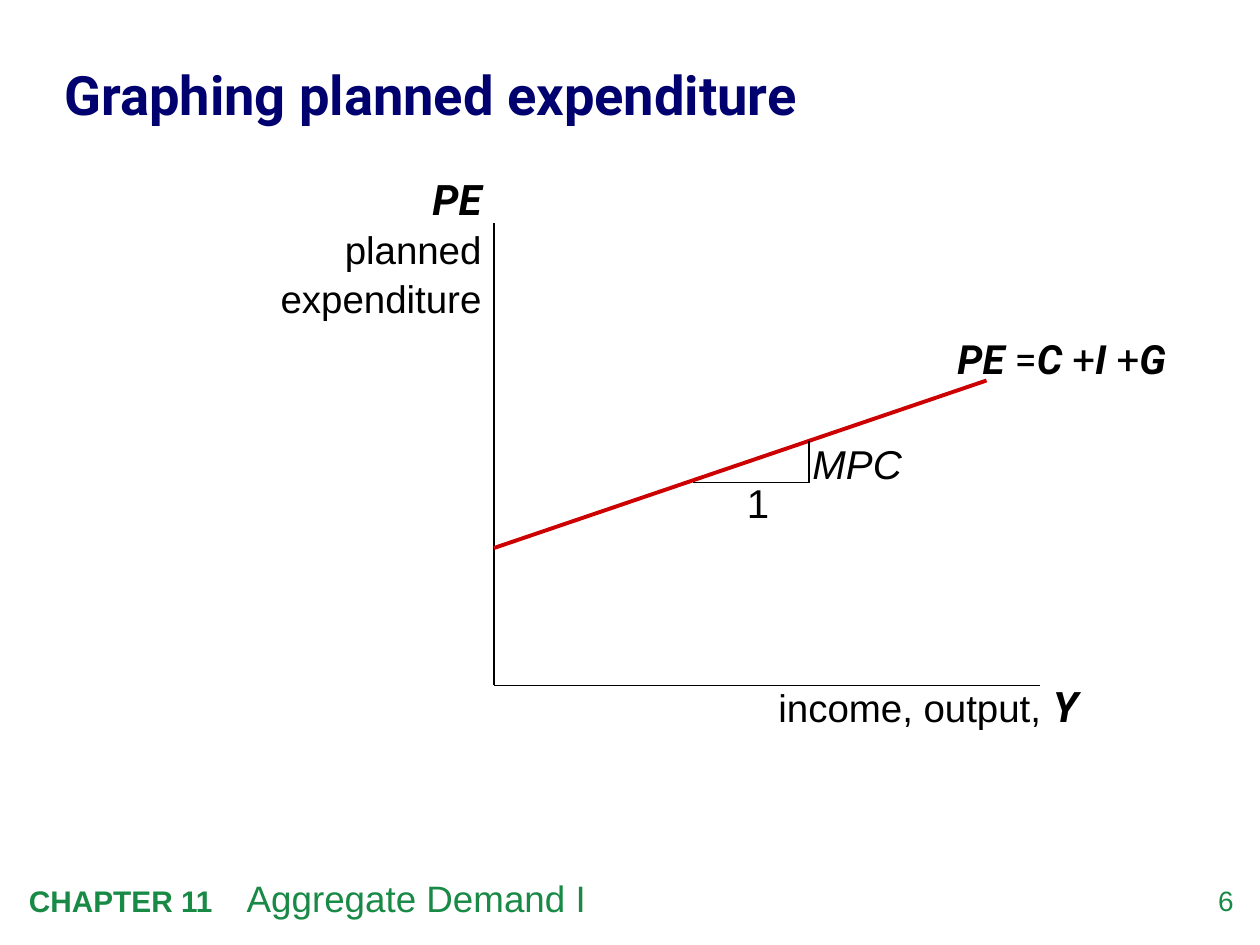
from lxml import etree
from pptx import Presentation
from pptx.dml.color import RGBColor
from pptx.enum import shapes, text
from pptx.oxml import ns
from pptx.util import Inches, Pt

GREEN = RGBColor(0x19, 0x8A, 0x46)
NAVY = RGBColor(0x00, 0x00, 0x6E)
BLACK = RGBColor(0x00, 0x00, 0x00)
RED = RGBColor(0xCC, 0x00, 0x00)
LEFT, RIGHT = text.PP_ALIGN.LEFT, text.PP_ALIGN.RIGHT


def style_font(font, size, name="Arial", color=BLACK, bold=False, italic=False):
    """Set every property of a font."""
    font.size, font.name = Pt(size), name
    font.bold, font.italic = bold, italic
    font.color.rgb = color


def add_text_frame(slide, left, top, width, height, inset=True):
    """Add a wrapping text box and return its frame."""
    frame = slide.shapes.add_textbox(*map(Inches, (left, top, width, height))).text_frame
    frame.word_wrap = True
    if not inset:
        frame.margin_left = frame.margin_right = frame.margin_top = frame.margin_bottom = 0
    return frame


def write_line(paragraph, words, align=LEFT, **font):
    """Fill a paragraph whose runs all share one font."""
    paragraph.text = words
    paragraph.alignment = align
    style_font(paragraph.font, **font)


def write_runs(paragraph, runs):
    """Fill a paragraph with runs of differing fonts."""
    for words, font in runs:
        run = paragraph.add_run()
        run.text = words
        style_font(run.font, **font)


def add_line(slide, start, end, color=BLACK, width=1):
    """Draw a straight line without a shadow."""
    line = slide.shapes.add_connector(
        shapes.MSO_CONNECTOR.STRAIGHT, *map(Inches, (*start, *end)))
    line.line.color.rgb = color
    line.line.width = Pt(width)
    etree.SubElement(line._element.spPr, ns.qn("a:effectLst"))


def add_footer(slide, left, top, width, height):
    """Place the chapter name and the slide number."""
    number = add_text_frame(slide, left + width - 0.55, top + 0.11, 0.55, 0.32, inset=False)
    write_line(number.paragraphs[0], "6", RIGHT, size=16, color=GREEN)
    chapter = add_text_frame(slide, left, top, 8.18, height).paragraphs[0]
    write_runs(chapter, [
        ("CHAPTER 11\t", dict(size=17, color=GREEN, bold=True)),
        ("Aggregate Demand I", dict(size=21, color=GREEN)),
    ])
    tabs = etree.SubElement(chapter._p.get_or_add_pPr(), ns.qn("a:tabLst"))
    etree.SubElement(tabs, ns.qn("a:tab"), pos=str(Inches(1.73)), algn="l")


def add_title(slide, left, top, width, height):
    """Place the slide title."""
    frame = add_text_frame(slide, left, top, width, height, inset=False)
    frame.vertical_anchor = text.MSO_ANCHOR.MIDDLE
    paragraph = frame.paragraphs[0]
    write_line(paragraph, "Graphing planned expenditure",
               size=31, name="Roboto", color=NAVY, bold=True)
    paragraph.line_spacing = 0.9


def add_axes(slide, left, top, width, height):
    """Draw both axes with their labels."""
    bottom = top + height
    add_line(slide, (left, top), (left, bottom))
    add_line(slide, (left, bottom), (left + width, bottom))

    income = add_text_frame(slide, left + 2.16, bottom - 0.09, 2.83, 0.5)
    symbol = dict(size=24, name="Roboto", bold=True, italic=True)
    write_runs(income.paragraphs[0], [
        ("income, output,", dict(size=22)), (" ", dict(size=24)), ("Y", symbol)])

    frame = add_text_frame(slide, left - 2.23, top - 0.44, 2.23, 1.28)
    labels = [("PE", symbol), ("planned", dict(size=22)), ("expenditure", dict(size=22))]
    for index, (words, font) in enumerate(labels):
        paragraph = frame.add_paragraph() if index else frame.paragraphs[0]
        write_line(paragraph, words, RIGHT, **font)
        paragraph.space_before = Pt(1.2)


def add_expenditure_line(slide, left, top, width, height):
    """Draw the rising expenditure line with its equation."""
    equation = add_text_frame(slide, left + width - 0.33, top - 0.42, 2.25, 0.48)
    plain = dict(size=23, name="Roboto")
    symbol = dict(plain, bold=True, italic=True)
    write_runs(equation.paragraphs[0], [
        ("PE", symbol), (" =", plain), ("C ", symbol), ("+", plain),
        ("I ", symbol), ("+", plain), ("G", symbol)])
    add_line(slide, (left, top + height), (left + width, top), RED, 2.25)


def add_slope_triangle(slide, left, top, width, height):
    """Mark the slope of the line as run and rise."""
    corner = (left + width, top + height)
    add_line(slide, (left, top + height), corner, width=0.75)
    add_line(slide, corner, (left + width, top), width=0.75)
    rise = add_text_frame(slide, left + width - 0.07, top - 0.06, 1, 0.48)
    write_line(rise.paragraphs[0], "MPC", size=23, italic=True)
    run = add_text_frame(slide, left + 0.33, top + height - 0.08, 0.42, 0.48)
    write_line(run.paragraphs[0], "1", size=23)


def main():
    """Build and save the slide."""
    presentation = Presentation()
    presentation.slide_width, presentation.slide_height = Inches(10), Inches(7.5)
    slide = presentation.slides.add_slide(presentation.slide_layouts[6])
    add_footer(slide, 0.13, 6.9, 9.66, 0.45)
    add_title(slide, 0.51, 0.26, 9.02, 1.03)
    add_axes(slide, 3.92, 1.77, 4.33, 3.67)
    add_expenditure_line(slide, 3.92, 3.02, 3.91, 1.33)
    add_slope_triangle(slide, 5.5, 3.5, 0.92, 0.33)
    presentation.save("out.pptx")


if __name__ == "__main__":
    main()
